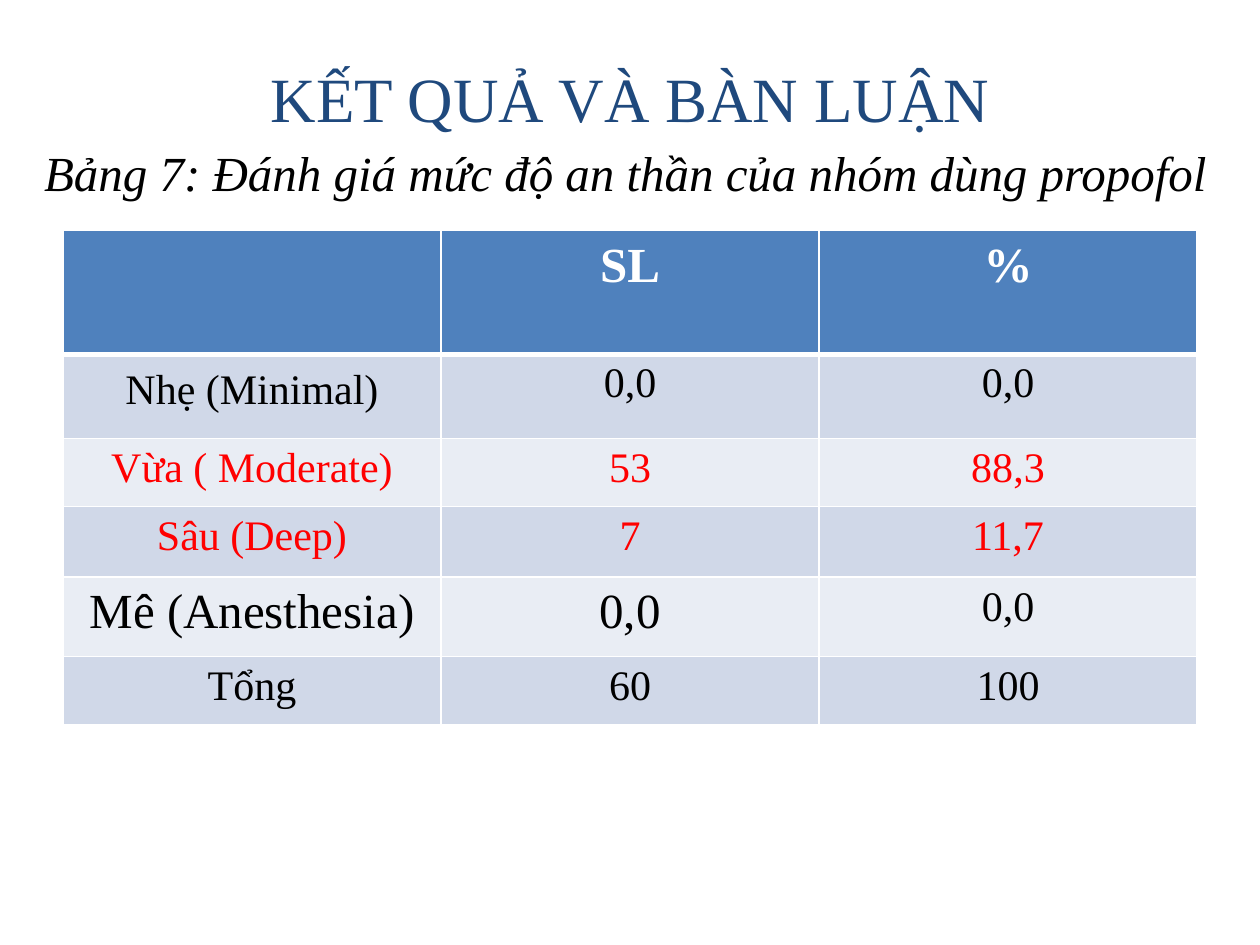
"""Build the slide on sedation levels in the propofol group."""
from dataclasses import dataclass

from lxml.etree import SubElement
from pptx import Presentation
from pptx.dml.color import RGBColor
from pptx.enum.text import MSO_ANCHOR, PP_ALIGN
from pptx.oxml import parse_xml
from pptx.oxml.ns import nsdecls
from pptx.util import Cm, Pt

TITLE = "KẾT QUẢ VÀ BÀN LUẬN"
CAPTION = "Bảng 7: Đánh giá mức độ an thần của nhóm dùng propofol"
ROWS = [
    ("", "SL", "%"),
    ("Nhẹ (Minimal)", "0,0", "0,0"),
    ("Vừa ( Moderate)", "53", "88,3"),
    ("Sâu (Deep)", "7", "11,7"),
    ("Mê (Anesthesia)", "0,0", "0,0"),
    ("Tổng", "60", "100"),
]
ROW_HEIGHTS = [2.49, 1.7, 1.37, 1.42, 1.6, 1.37]
COLUMN_WIDTH = 7.62
HEADER, MINIMAL = 0, 1
HIGHLIGHTED = {2, 3}
ENLARGED = {(4, 0), (4, 1)}


@dataclass(frozen=True)
class Theme:
    """Colours, font and type sizes of the slide."""
    font: str = "Times New Roman"
    title: str = "1F497D"
    ink: str = "000000"
    alert: str = "FF0000"
    white: str = "FFFFFF"
    header: str = "4F81BD"
    bands: tuple = ("E9EDF4", "D0D8E8")
    title_size: int = 36
    large: int = 28
    body: int = 24


THEME = Theme()


def add_span(para, text, size, color, bold=False, italic=False):
    """Append one styled run to a paragraph."""
    span = para.add_run()
    span.text = text
    span.font.name = THEME.font
    span.font.size = Pt(size)
    span.font.bold = bold
    span.font.italic = italic
    span.font.color.rgb = RGBColor.from_string(color)


def add_line(page, place, text, size, color, align, italic=False):
    """Add a one-paragraph text box centred vertically."""
    box = page.shapes.add_textbox(*map(Cm, place))
    frame = box.text_frame
    frame.word_wrap = True
    frame.vertical_anchor = MSO_ANCHOR.MIDDLE
    para = frame.paragraphs[0]
    para.alignment = align
    add_span(para, text, size, color, italic=italic)


def set_borders(cell, widths):
    """Draw white cell borders, with widths in points by side."""
    properties = cell._tc.get_or_add_tcPr()
    for index, side in enumerate("LRTB"):
        line = parse_xml(f'<a:ln{side} {nsdecls("a")} w="{Pt(widths.get(side, 1))}"/>')
        fill = SubElement(line, line.tag.split("}")[0] + "}solidFill")
        SubElement(fill, fill.tag.replace("solidFill", "srgbClr"), val=THEME.white)
        properties.insert(index, line)


def fill_cell(cell, row, column, text):
    """Set the fill, borders, margins and text of one table cell."""
    is_header = row == HEADER
    cell.fill.solid()
    color = THEME.header if is_header else THEME.bands[row % 2]
    cell.fill.fore_color.rgb = RGBColor.from_string(color)
    set_borders(cell, {HEADER: {"B": 3}, MINIMAL: {"T": 3}}.get(row, {}))
    if row != MINIMAL:
        cell.margin_left = cell.margin_right = Cm(0.18)
        cell.margin_top = cell.margin_bottom = Cm(0)
    para = cell.text_frame.paragraphs[0]
    para.alignment = PP_ALIGN.CENTER
    if row != MINIMAL or column == 0:
        para.line_spacing = 1.15
    if text:
        size = THEME.large if is_header or (row, column) in ENLARGED else THEME.body
        ink = THEME.alert if row in HIGHLIGHTED else THEME.ink
        add_span(para, text, size, THEME.white if is_header else ink, bold=is_header)


def add_results(page):
    """Add the table of sedation levels."""
    count = len(ROWS[0])
    shape = page.shapes.add_table(
        len(ROWS), count, Cm(1.27), Cm(4.65),
        Cm(COLUMN_WIDTH * count), Cm(sum(ROW_HEIGHTS)))
    table = shape.table
    for column in table.columns:
        column.width = Cm(COLUMN_WIDTH)
    for row, (height, texts) in enumerate(zip(ROW_HEIGHTS, ROWS)):
        table.rows[row].height = Cm(height)
        for column, text in enumerate(texts):
            fill_cell(table.cell(row, column), row, column, text)


def main():
    """Create and save the deck."""
    deck = Presentation()
    deck.slide_width, deck.slide_height = Cm(25.4), Cm(19.05)
    page = deck.slides.add_slide(deck.slide_layouts[6])
    add_line(page, (1.27, 0.76, 22.86, 2.41), TITLE,
             THEME.title_size, THEME.title, PP_ALIGN.CENTER)
    add_results(page)
    add_line(page, (0.64, 2.74, 24.76, 1.45), CAPTION,
             THEME.large, THEME.ink, PP_ALIGN.LEFT, italic=True)
    deck.save("out.pptx")


if __name__ == "__main__":
    main()
